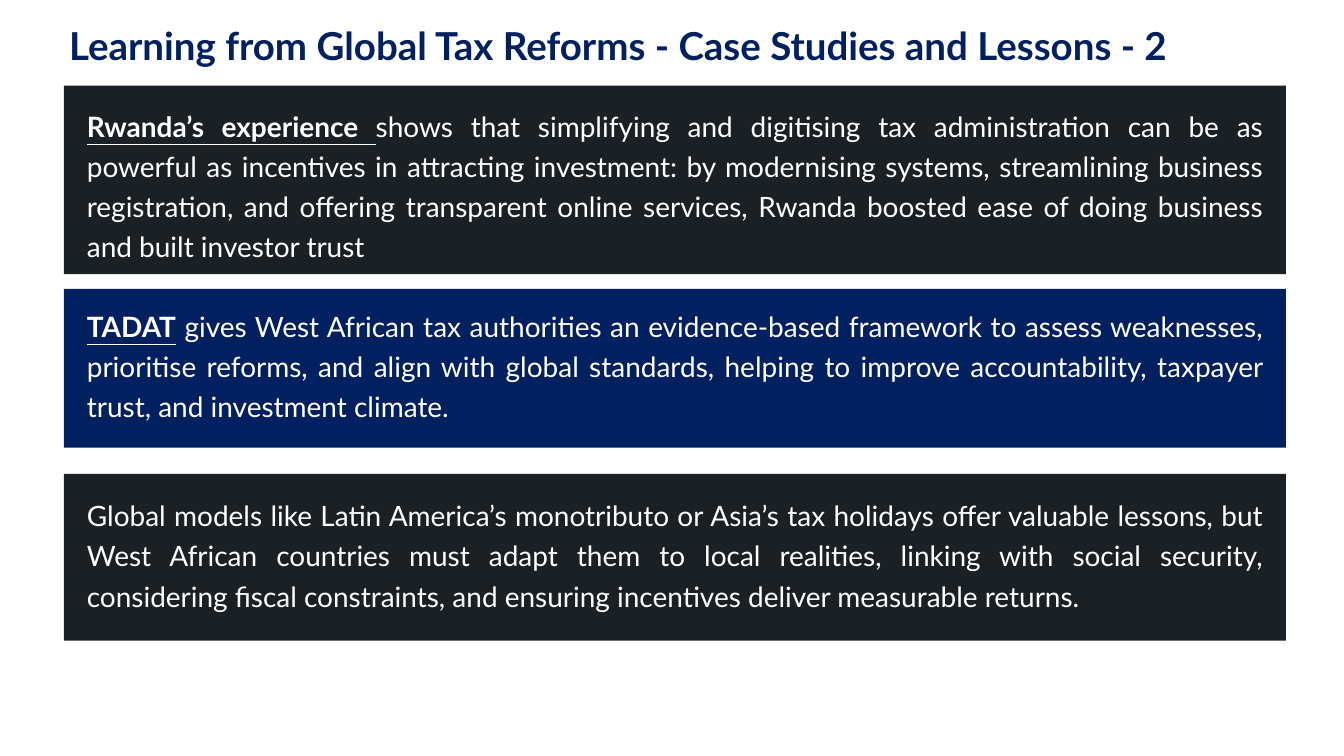
from pptx import Presentation
from pptx.dml.color import RGBColor
from pptx.enum.shapes import MSO_SHAPE as Shape
from pptx.enum.text import MSO_ANCHOR as Anchor, MSO_AUTO_SIZE as Fit, PP_ALIGN as Align
from pptx.util import Pt

NAVY = RGBColor(0x00, 0x20, 0x60)
DARK = RGBColor(0x1B, 0x20, 0x24)
WHITE = RGBColor(0xFF, 0xFF, 0xFF)
LEFT, WIDTH, INSET = 91.4, 1745.3, 25.6

deck = Presentation()
deck.slide_width, deck.slide_height = Pt(1919.52), Pt(1080)
slide = deck.slides.add_slide(deck.slide_layouts[5])

title = slide.shapes.title
title.left, title.top, title.width, title.height = Pt(LEFT), Pt(28), Pt(1629.4), Pt(74.2)
frame = title.text_frame
frame.text = "Learning from Global Tax Reforms - Case Studies and Lessons - 2"
frame.word_wrap = False
frame.auto_size = Fit.NONE
frame.vertical_anchor = Anchor.TOP
para = frame.paragraphs[0]
para.alignment = Align.LEFT
para.font.name, para.font.size, para.font.bold = "Lato", Pt(55), True
para.font.color.rgb = NAVY

# Panel top and height, text top and height, fill, lead words, body
panels = [
    (122.4, 269.3, 142.6, 234, DARK, "Rwanda’s experience ",
     "shows that simplifying and digitising tax administration can be as powerful "
     "as incentives in attracting investment: by modernising systems, streamlining "
     "business registration, and offering transparent online services, Rwanda "
     "boosted ease of doing business and built investor trust"),
    (412.6, 226.8, 428.4, 176.4, NAVY, "TADAT",
     " gives West African tax authorities an evidence-based framework to assess "
     "weaknesses, prioritise reforms, and align with global standards, helping to "
     "improve accountability, taxpayer trust, and investment climate."),
    (676.8, 238.3, 699.1, 175.7, DARK, "",
     "Global models like Latin America’s monotributo or Asia’s tax holidays offer "
     "valuable lessons, but West African countries must adapt them to local "
     "realities, linking with social security, considering fiscal constraints, and "
     "ensuring incentives deliver measurable returns."),
]

for top, height, text_top, text_height, fill, lead, body in panels:
    panel = slide.shapes.add_shape(
        Shape.RECTANGLE, Pt(LEFT), Pt(top), Pt(WIDTH), Pt(height))
    panel.shadow.inherit = False
    panel.fill.solid()
    panel.fill.fore_color.rgb = fill
    panel.line.fill.background()

    box = slide.shapes.add_textbox(
        Pt(LEFT + INSET), Pt(text_top), Pt(WIDTH - 2 * INSET), Pt(text_height))
    frame = box.text_frame
    frame.word_wrap = True
    para = frame.paragraphs[0]
    para.alignment, para.line_spacing = Align.JUSTIFY, 1.2
    para.font.name, para.font.size = "Lato", Pt(40)
    para.font.color.rgb = WHITE
    if lead:
        run = para.add_run()
        run.text = lead
        run.font.bold = run.font.underline = True
    para.add_run().text = body

deck.save("out.pptx")
